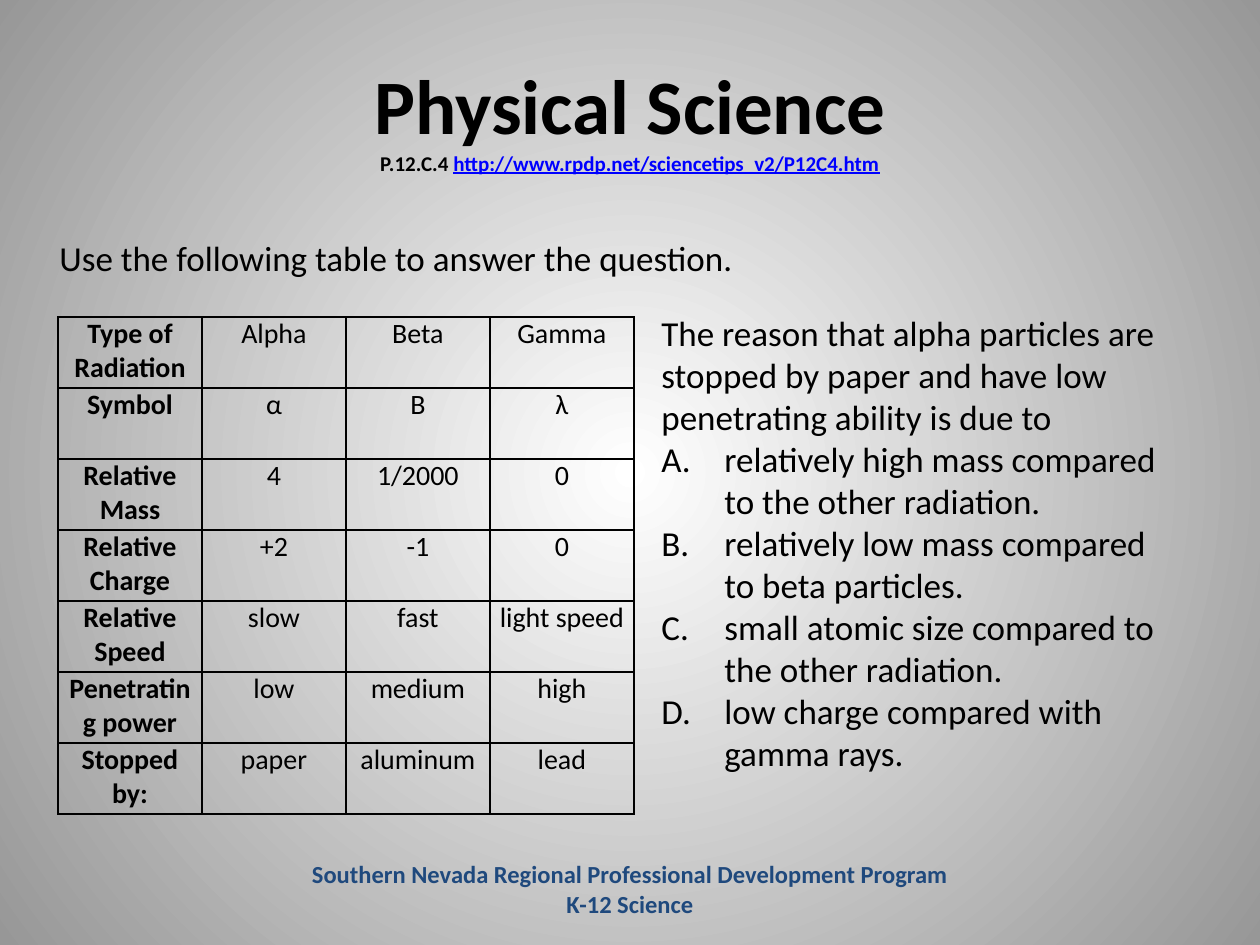
import pptx
import pptx.util
import pptx.dml.color
import pptx.enum.text
import pptx.oxml.ns
from lxml import etree

FONT = "Calibri"
BLACK, NAVY, BLUE = "000000", "1F497D", "0000FF"
GLOW = ["FFFFFF", "979797"]

TITLE = "Physical Science"
CODE = "P.12.C.4 "
LINK = "http://www.rpdp.net/sciencetips_v2/P12C4.htm"
INTRO = "Use the following table to answer the question."
ROWS = [
    ("Type of Radiation", "Alpha", "Beta", "Gamma"),
    ("Symbol", "α", "Β", "λ"),
    ("Relative Mass", "4", "1/2000", "0"),
    ("Relative Charge", "+2", "-1", "0"),
    ("Relative Speed", "slow", "fast", "light speed"),
    ("Penetrating power", "low", "medium", "high"),
    ("Stopped by:", "paper", "aluminum", "lead"),
]
STEM = ("The reason that alpha particles are stopped by paper "
        "and have low penetrating ability is due to")
CHOICES = [
    "relatively high mass compared to the other radiation.",
    "relatively low mass compared to beta particles.",
    "small atomic size compared to the other radiation.",
    "low charge compared with gamma rays.",
]
FOOTER = ["Southern Nevada Regional Professional Development Program",
          "K-12 Science"]

# Boxes in px: left, top, width, height
TITLE_BOX = (63, 38, 1134, 157)
INTRO_BOX = (47, 230, 866, 56)
QUIZ_BOX = (649, 305, 538, 518)
FOOT_BOX = (189, 853, 882, 73)
GRID_AT = (58, 317)
COL, ROW, PAD, INDENT = 144, 71, 9, 63

CENTER = pptx.enum.text.PP_ALIGN.CENTER
MIDDLE = pptx.enum.text.MSO_ANCHOR.MIDDLE
qn = pptx.oxml.ns.qn


def px(n):
    return round(n * 914400 / 126)


def rgb(code):
    return pptx.dml.color.RGBColor.from_string(code)


def style(para, size, color=BLACK, bold=False, align=None):
    para.alignment = align
    for run in para.runs:
        font = run.font
        font.name, font.size, font.bold = FONT, pptx.util.Pt(size), bold
        font.color.rgb = rgb(color)


def add_box(slide, box, lines):
    frame = slide.shapes.add_textbox(*map(px, box)).text_frame
    frame.word_wrap = True
    frame.text = "\n".join(lines)
    return frame


def letter(para):
    props = para._p.get_or_add_pPr()
    props.set("marL", str(px(INDENT)))
    props.set("indent", str(-px(INDENT)))
    etree.SubElement(props, qn("a:buFont"), typeface="+mj-lt")
    etree.SubElement(props, qn("a:buAutoNum"), type="alphaUcPeriod")


def border(cell):
    props = cell._tc.get_or_add_tcPr()
    for side in ("lnL", "lnR", "lnT", "lnB"):
        line = etree.SubElement(props, qn("a:" + side), w="12700")
        fill = etree.SubElement(line, qn("a:solidFill"))
        etree.SubElement(fill, qn("a:srgbClr"), val=BLACK)


def add_glow(slide):
    fill = slide.background.fill
    fill.gradient()
    for stop, color, pos in zip(fill.gradient_stops, GLOW, (0, 1)):
        stop.color.rgb = rgb(color)
        stop.position = pos
    grad = slide.element.find(".//" + qn("a:gradFill"))
    grad.remove(grad.find(qn("a:lin")))
    ring = etree.SubElement(grad, qn("a:path"), {"path": "circle"})
    etree.SubElement(ring, qn("a:fillToRect"),
                     {side: "50000" for side in "ltrb"})


def add_grid(slide):
    count, width = len(ROWS), len(ROWS[0])
    table = slide.shapes.add_table(
        count, width, *map(px, (*GRID_AT, COL * width, ROW * count))).table
    table.first_row = table.horz_banding = False
    for col in table.columns:
        col.width = px(COL)
    for row, texts in zip(table.rows, ROWS):
        row.height = px(ROW)
        for i, (cell, text) in enumerate(zip(row.cells, texts)):
            cell.margin_left = cell.margin_right = px(PAD)
            cell.margin_top = cell.margin_bottom = 0
            border(cell)
            cell.fill.background()
            cell.text_frame.text = text
            style(cell.text_frame.paragraphs[0], 16, bold=i == 0, align=CENTER)


def main():
    deck = pptx.Presentation()
    deck.slide_width, deck.slide_height = px(1260), px(945)
    slide = deck.slides.add_slide(deck.slide_layouts[6])
    add_glow(slide)

    # Footer
    for para in add_box(slide, FOOT_BOX, FOOTER).paragraphs:
        style(para, 14, NAVY, True, CENTER)

    # Title with its standard code and address
    frame = add_box(slide, TITLE_BOX, [TITLE])
    frame.vertical_anchor = MIDDLE
    head = frame.paragraphs[0]
    head.add_line_break()
    for text in (CODE, LINK):
        head.add_run().text = text
    style(head, 44, bold=True, align=CENTER)
    for run in head.runs[1:]:
        run.font.size = pptx.util.Pt(12)
    link = head.runs[-1].font
    link.color.rgb, link.underline = rgb(BLUE), True

    # Table and its lead-in
    add_grid(slide)
    style(add_box(slide, INTRO_BOX, [INTRO]).paragraphs[0], 20)

    # Question and lettered choices
    quiz = add_box(slide, QUIZ_BOX, [STEM] + CHOICES).paragraphs
    for para in quiz[1:]:
        letter(para)
    for para in quiz:
        style(para, 20)

    deck.save("out.pptx")


if __name__ == "__main__":
    main()
